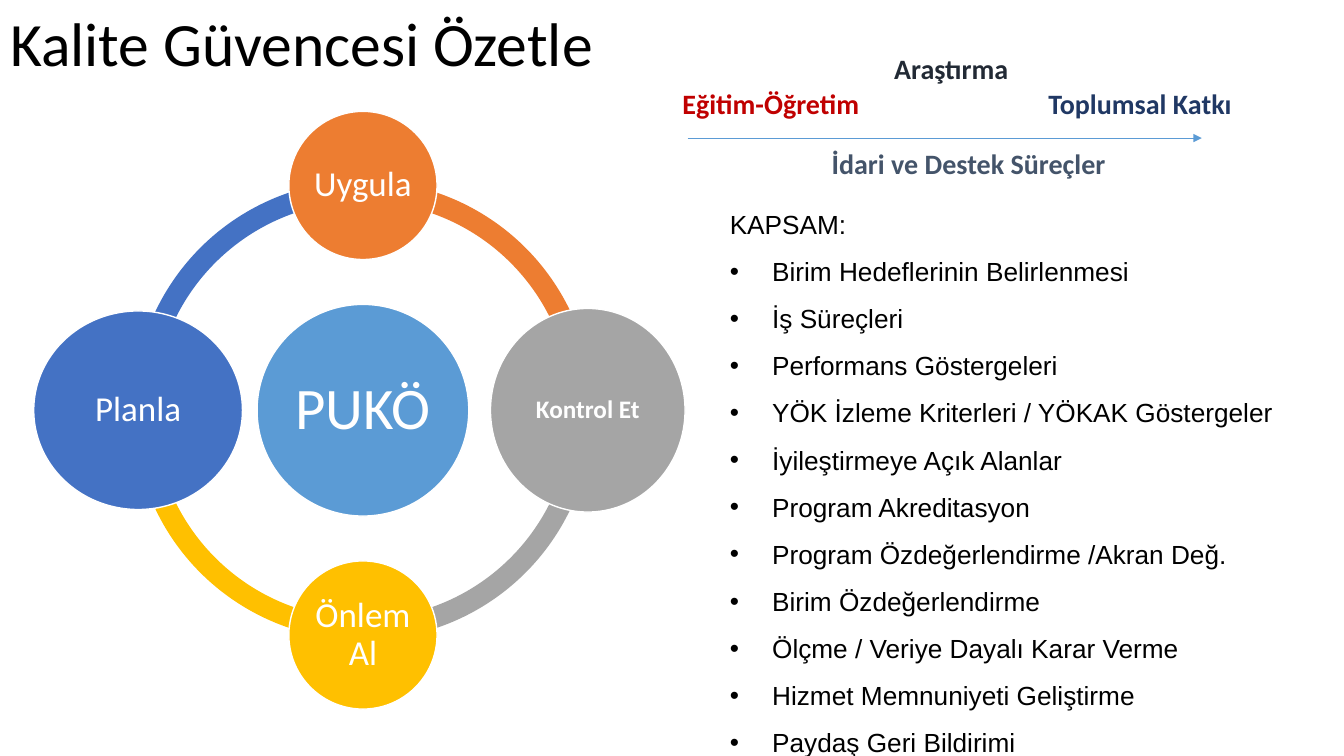
from math import cos, radians, sin

from lxml.etree import SubElement
from pptx import Presentation
from pptx.dml.color import RGBColor
from pptx.enum.shapes import MSO_CONNECTOR, MSO_SHAPE
from pptx.enum.text import MSO_ANCHOR, MSO_AUTO_SIZE, PP_ALIGN
from pptx.oxml.ns import qn
from pptx.util import Emu, Pt

BLUE, ORANGE, GRAY, YELLOW, SKY = "4472C4", "ED7D31", "A5A5A5", "FFC000", "5B9BD5"
WHITE, BLACK = "FFFFFF", "000000"

# label, width, height, colour, text size, bold; clockwise from the left
STEPS = [
    ("Planla", 207, 197, BLUE, 25, False),
    ("Uygula", 147, 147, ORANGE, 25, False),
    ("Kontrol Et", 193, 202, GRAY, 18, True),
    ("Önlem Al", 147, 147, YELLOW, 25, False),
]
SCOPE = [
    "Birim Hedeflerinin Belirlenmesi",
    "İş Süreçleri",
    "Performans Göstergeleri",
    "YÖK İzleme Kriterleri / YÖKAK Göstergeler",
    "İyileştirmeye Açık Alanlar",
    "Program Akreditasyon",
    "Program Özdeğerlendirme /Akran Değ.",
    "Birim Özdeğerlendirme",
    "Ölçme / Veriye Dayalı Karar Verme",
    "Hizmet Memnuniyeti Geliştirme",
    "Paydaş Geri Bildirimi",
]
# label, left, top, width, height (relative to the region), colour
AREAS = [
    ("Eğitim-Öğretim", 0, 35, 197, 44, "C00000"),
    ("Araştırma", 210, 0, 141, 44, "222A35"),
    ("Toplumsal Katkı", 363, 35, 214, 44, "203864"),
    ("İdari ve Destek Süreçler", 148, 94, 295, 44, "44546A"),
]


def px(n):
    """Length on a grid of 100 px to the inch."""
    return Emu(round(n * 9144))


def rgb(color):
    return RGBColor.from_string(color)


def add_run(p, text, size, color, font="Calibri", bold=False):
    r = p.add_run()
    r.text = text
    r.font.name, r.font.size, r.font.bold = font, Pt(size), bold
    r.font.color.rgb = rgb(color)


def add_text_box(s, x, y, w, h):
    tf = s.shapes.add_textbox(px(x), px(y), px(w), px(h)).text_frame
    tf.word_wrap = True
    return tf


def add_title(s, x, y, w, h):
    sp = s.shapes.title
    sp.left, sp.top, sp.width, sp.height = px(x), px(y), px(w), px(h)
    tf = sp.text_frame
    tf.auto_size = MSO_AUTO_SIZE.NONE
    tf.vertical_anchor = MSO_ANCHOR.MIDDLE
    p = tf.paragraphs[0]
    p.alignment, p.line_spacing = PP_ALIGN.LEFT, 0.9
    add_run(p, "Kalite Güvencesi Özetle", 44, BLACK)


def add_solid(s, kind, x, y, w, h, color):
    sp = s.shapes.add_shape(kind, px(x), px(y), px(w), px(h))
    sp.shadow.inherit = False
    sp.fill.solid()
    sp.fill.fore_color.rgb = rgb(color)
    sp.line.fill.background()
    return sp


def add_circle(s, cx, cy, label, w, h, color, size, bold=False, inset=3):
    sp = add_solid(s, MSO_SHAPE.OVAL, cx - w / 2, cy - h / 2, w, h, color)
    sp.line.color.rgb, sp.line.width = rgb(WHITE), Pt(1)
    tf = sp.text_frame
    tf.word_wrap = True
    tf.vertical_anchor = MSO_ANCHOR.MIDDLE
    tf.margin_left = tf.margin_right = tf.margin_top = tf.margin_bottom = px(inset)
    p = tf.paragraphs[0]
    p.alignment, p.line_spacing = PP_ALIGN.CENTER, 0.9
    add_run(p, label, size, WHITE, bold=bold)


def add_cycle(s, x, y, size):
    """Ring of four quarter arcs with a circle at each joint and one in the centre."""
    cx, cy, radius = x + size / 2, y + size / 2, 223
    angles = [180, 270, 0, 90]
    for angle, step in zip(angles, STEPS):
        arc = add_solid(s, MSO_SHAPE.BLOCK_ARC, x, y, size, size, step[3])
        # adjustments count angles in units of 5/3 degree
        arc.adjustments[0] = angle * 0.6
        arc.adjustments[1] = (angle + 90) % 360 * 0.6
        arc.adjustments[2] = 0.046
    add_circle(s, cx, cy, "PUKÖ", 210, 210, SKY, 42, inset=6)
    for angle, step in zip(angles, STEPS):
        t = radians(angle)
        add_circle(s, cx + radius * cos(t), cy + radius * sin(t), *step)


def add_scope(s, x, y, w, h):
    tf = add_text_box(s, x, y, w, h)
    p = tf.paragraphs[0]
    p.line_spacing = 1.5
    add_run(p, "KAPSAM:", 18.7, BLACK, "Arial")
    for item in SCOPE:
        p = tf.add_paragraph()
        p.line_spacing = 1.5
        pPr = p._p.get_or_add_pPr()
        pPr.set("marL", str(px(42)))
        pPr.set("indent", str(-px(42)))
        SubElement(pPr, qn("a:buFont"), typeface="Arial")
        SubElement(pPr, qn("a:buChar"), char="•")
        add_run(p, item, 18.7, BLACK, "Arial")


def add_areas(s, x, y):
    """Activity areas above and below an arrow."""
    for label, dx, dy, w, h, color in AREAS:
        tf = add_text_box(s, x + dx, y + dy, w, h)
        tf.word_wrap = False
        add_run(tf.paragraphs[0], label, 20, color, bold=True)
    arrow = s.shapes.add_connector(
        MSO_CONNECTOR.STRAIGHT, px(x + 15), px(y + 91), px(x + 525), px(y + 91))
    arrow.line.color.rgb, arrow.line.width = rgb(SKY), Pt(0.5)
    SubElement(arrow.line._get_or_add_ln(), qn("a:tailEnd"), type="triangle")
    SubElement(arrow._element.spPr, qn("a:effectLst"))


def main():
    prs = Presentation()
    prs.slide_width, prs.slide_height = px(1333), px(750)
    s = prs.slides.add_slide(prs.slide_layouts[5])
    add_title(s, 0, 0, 900, 93)
    add_cycle(s, 132, 179, 456)
    add_scope(s, 714, 186, 564, 570)
    add_areas(s, 667, 46)
    prs.save("out.pptx")


if __name__ == "__main__":
    main()
